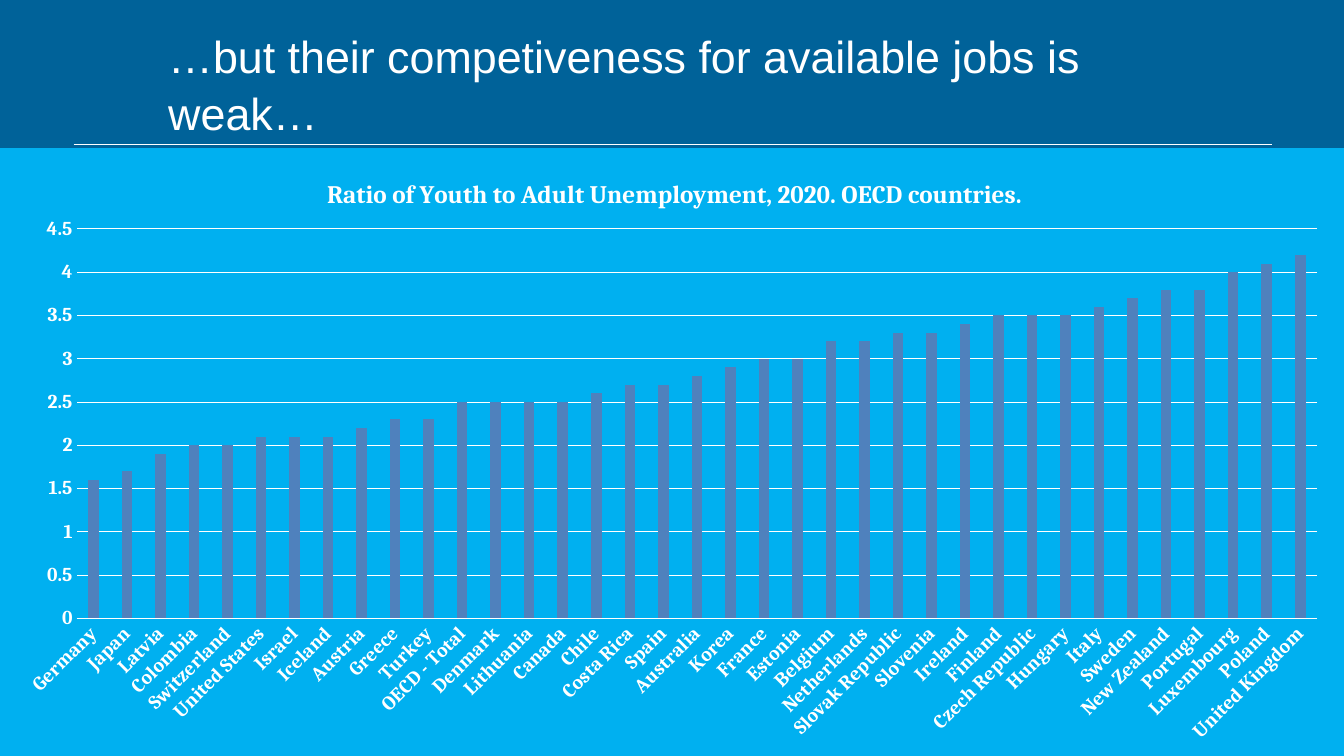
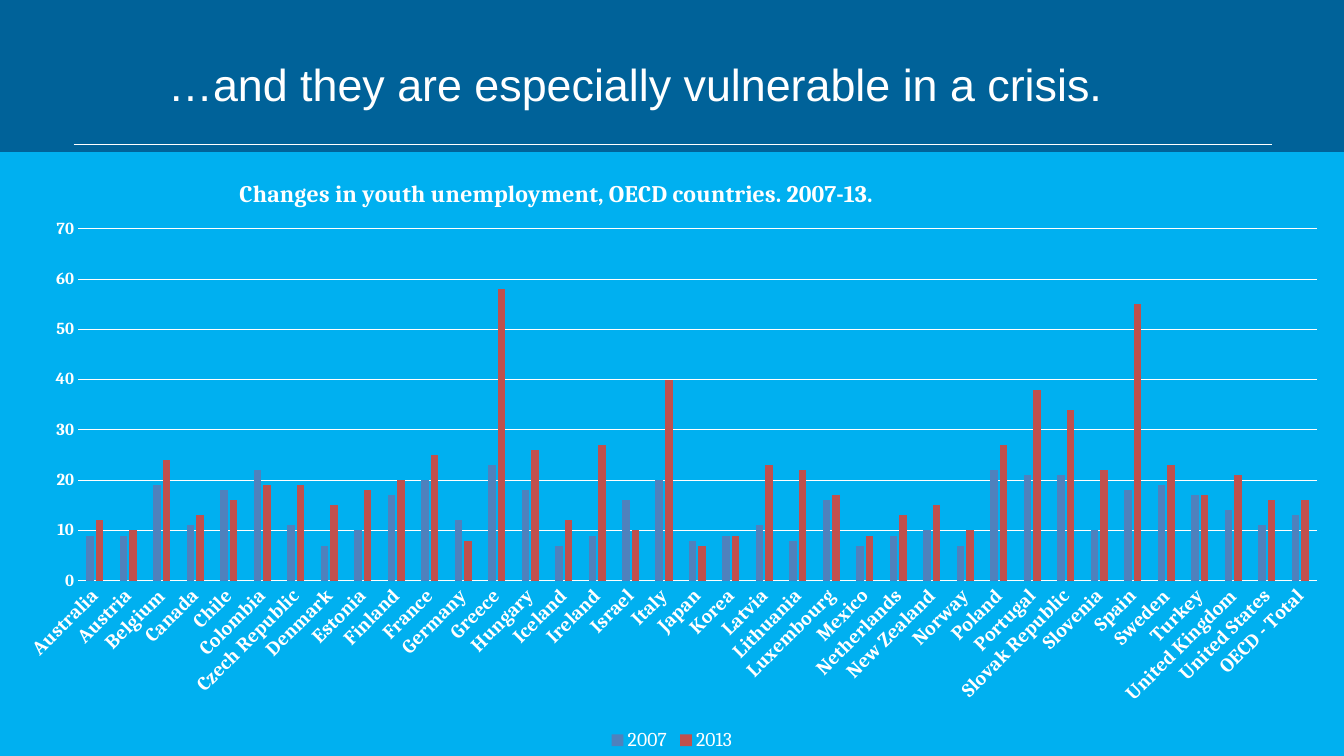
from dataclasses import dataclass

from lxml import etree
from pptx import Presentation, util as u
from pptx.chart.data import CategoryChartData
from pptx.dml.color import RGBColor
from pptx.enum import chart as ch, shapes, text
from pptx.oxml import parse_xml
from pptx.oxml.ns import nsdecls, qn


@dataclass(frozen=True)
class Theme:
    band: str = "006299"
    panel: str = "00B0F0"
    ink: str = "FFFFFF"
    series: tuple = ("4F81BD", "C0504D")
    head_font: str = "Arial"
    chart_font: str = "Cambria"
    head_size: int = 32
    base_size: int = 10
    label_size: int = 14
    grid_width: float = 0.75
    rule_width: float = 0.5


T = Theme()
SLIDE_W, SLIDE_H = 13.33, 7.5
TITLE_BOX = (1.57, 0.26, 10.81, 1.12)
RULE_BOX = (0.73, 1.43, 11.89, 0)

RATIO = {
    "Germany": 1.6, "Japan": 1.7, "Latvia": 1.9, "Colombia": 2, "Switzerland": 2,
    "United States": 2.1, "Israel": 2.1, "Iceland": 2.1, "Austria": 2.2,
    "Greece": 2.3, "Turkey": 2.3, "OECD - Total": 2.5, "Denmark": 2.5,
    "Lithuania": 2.5, "Canada": 2.5, "Chile": 2.6, "Costa Rica": 2.7, "Spain": 2.7,
    "Australia": 2.8, "Korea": 2.9, "France": 3, "Estonia": 3, "Belgium": 3.2,
    "Netherlands": 3.2, "Slovak Republic": 3.3, "Slovenia": 3.3, "Ireland": 3.4,
    "Finland": 3.5, "Czech Republic": 3.5, "Hungary": 3.5, "Italy": 3.6,
    "Sweden": 3.7, "New Zealand": 3.8, "Portugal": 3.8, "Luxembourg": 4,
    "Poland": 4.1, "United Kingdom": 4.2,
}

CRISIS = {
    "Australia": (9, 12), "Austria": (9, 10), "Belgium": (19, 24), "Canada": (11, 13),
    "Chile": (18, 16), "Colombia": (22, 19), "Czech Republic": (11, 19),
    "Denmark": (7, 15), "Estonia": (10, 18), "Finland": (17, 20), "France": (20, 25),
    "Germany": (12, 8), "Greece": (23, 58), "Hungary": (18, 26), "Iceland": (7, 12),
    "Ireland": (9, 27), "Israel": (16, 10), "Italy": (20, 40), "Japan": (8, 7),
    "Korea": (9, 9), "Latvia": (11, 23), "Lithuania": (8, 22), "Luxembourg": (16, 17),
    "Mexico": (7, 9), "Netherlands": (9, 13), "New Zealand": (10, 15),
    "Norway": (7, 10), "Poland": (22, 27), "Portugal": (21, 38),
    "Slovak Republic": (21, 34), "Slovenia": (10, 22), "Spain": (18, 55),
    "Sweden": (19, 23), "Turkey": (17, 17), "United Kingdom": (14, 21),
    "United States": (11, 16), "OECD - Total": (13, 16),
}


def rgb(color):
    return RGBColor.from_string(color)


def set_font(font, size, name, bold=False, color=T.ink):
    font.size, font.name, font.bold = u.Pt(size), name, bold
    font.color.rgb = rgb(color)


def set_line(line, width):
    line.color.rgb = rgb(T.ink)
    line.width = u.Pt(width)


def add_text(s, box, content, size=T.head_size, name=T.head_font, spacing=1.05):
    sp = s.shapes.add_textbox(*map(u.Inches, box))
    tf = sp.text_frame
    tf.word_wrap = True
    tf.margin_right = u.Inches(0.2)
    tf.vertical_anchor = text.MSO_ANCHOR.MIDDLE
    p = tf.paragraphs[0]
    p.line_spacing = spacing
    r = p.add_run()
    r.text = content
    set_font(r.font, size, name)


def add_rule(s, box):
    x, y, w, h = map(u.Inches, box)
    sp = s.shapes.add_connector(shapes.MSO_CONNECTOR.STRAIGHT, x, y, x + w, y + h)
    set_line(sp.line, T.rule_width)
    etree.SubElement(sp._element.spPr, qn("a:effectLst"))


def place(element, index, inner=False, **parts):
    for old in element.findall(qn("c:layout")):
        element.remove(old)
    layout = parse_xml(f"<c:layout {nsdecls('c')}><c:manualLayout/></c:layout>")
    modes = {"layoutTarget": "inner"} if inner else {}
    modes |= {"xMode": "edge", "yMode": "edge"}
    for tag, value in {**modes, **parts}.items():
        etree.SubElement(layout[0], qn(f"c:{tag}")).set("val", str(value))
    element.insert(index, layout)


def fill_chart(chart, color):
    chart._chartSpace.find(qn("c:chart")).addnext(parse_xml(
        f"<c:spPr {nsdecls('c', 'a')}><a:solidFill><a:srgbClr val='{color}'/>"
        "</a:solidFill><a:ln><a:noFill/></a:ln></c:spPr>"))


def style_axes(chart, value_size, top, step):
    cat, val = chart.category_axis, chart.value_axis
    for axis, size in ((cat, T.label_size), (val, value_size)):
        axis.major_tick_mark = axis.minor_tick_mark = ch.XL_TICK_MARK.NONE
        set_font(axis.tick_labels.font, size, T.chart_font, bold=True)
    set_line(cat.format.line, T.grid_width)
    cat._element.find(qn("c:txPr")).find(qn("a:bodyPr")).set("rot", "-2700000")
    val.minimum_scale, val.maximum_scale, val.major_unit = 0, top, step
    val.format.line.fill.background()
    val.has_major_gridlines = True
    set_line(val.major_gridlines.format.line, T.grid_width)


def add_columns(s, box, title, title_size, title_at, plot_at, names, rows,
                value_size, top, step):
    data = CategoryChartData()
    data.categories = list(rows)
    for i, name in enumerate(names):
        data.add_series(name, [v[i] if isinstance(v, tuple) else v
                               for v in rows.values()])
    chart = s.shapes.add_chart(ch.XL_CHART_TYPE.COLUMN_CLUSTERED,
                               *map(u.Inches, box), data).chart
    set_font(chart.font, T.base_size, T.chart_font)
    fill_chart(chart, T.panel)

    chart.has_title = True
    p = chart.chart_title.text_frame.paragraphs[0]
    r = p.add_run()
    r.text = title
    set_font(r.font, title_size, T.chart_font, bold=True)
    place(chart.chart_title._element, 1, x=title_at[0], y=title_at[1])
    place(chart._chartSpace.find(qn("c:chart")).find(qn("c:plotArea")), 0,
          inner=True, **dict(zip("xywh", plot_at)))

    plot = chart.plots[0]
    plot.gap_width, plot.overlap, plot.vary_by_categories = 219, -27, False
    for series, color in zip(plot.series, T.series):
        series.format.fill.solid()
        series.format.fill.fore_color.rgb = rgb(color)
    style_axes(chart, value_size, top, step)

    chart.has_legend = len(names) > 1
    if chart.has_legend:
        chart.legend.position = ch.XL_LEGEND_POSITION.BOTTOM
        chart.legend.include_in_layout = False
        set_font(chart.legend.font, T.label_size, T.chart_font)


def chart_slide(prs, heading, chart_top, **chart):
    s = prs.slides.add_slide(prs.slide_layouts[6])
    add_rule(s, RULE_BOX)
    add_text(s, TITLE_BOX, heading)
    add_columns(s, (0, chart_top, SLIDE_W, SLIDE_H - chart_top), **chart)


def main():
    prs = Presentation()
    prs.slide_width, prs.slide_height = u.Inches(SLIDE_W), u.Inches(SLIDE_H)
    fill = prs.slide_master.background.fill
    fill.solid()
    fill.fore_color.rgb = rgb(T.band)

    chart_slide(prs, "…but their competiveness for available jobs is weak…", 1.47,
                title="Ratio of Youth to Adult Unemployment, 2020. OECD countries.",
                title_size=18, title_at=(0.24, 0.04), plot_at=(0.057, 0.133, 0.923, 0.641),
                names=["Series 1"], rows=RATIO, value_size=14, top=4.5, step=0.5)
    chart_slide(prs, "…and they are especially vulnerable in a crisis.", 1.51,
                title="Changes in youth unemployment, OECD countries. 2007-13.",
                title_size=17, title_at=(0.175, 0.035), plot_at=(0.058, 0.127, 0.922, 0.583),
                names=["2007", "2013"], rows=CRISIS, value_size=12, top=70, step=10)
    prs.save("out.pptx")


if __name__ == "__main__":
    main()
